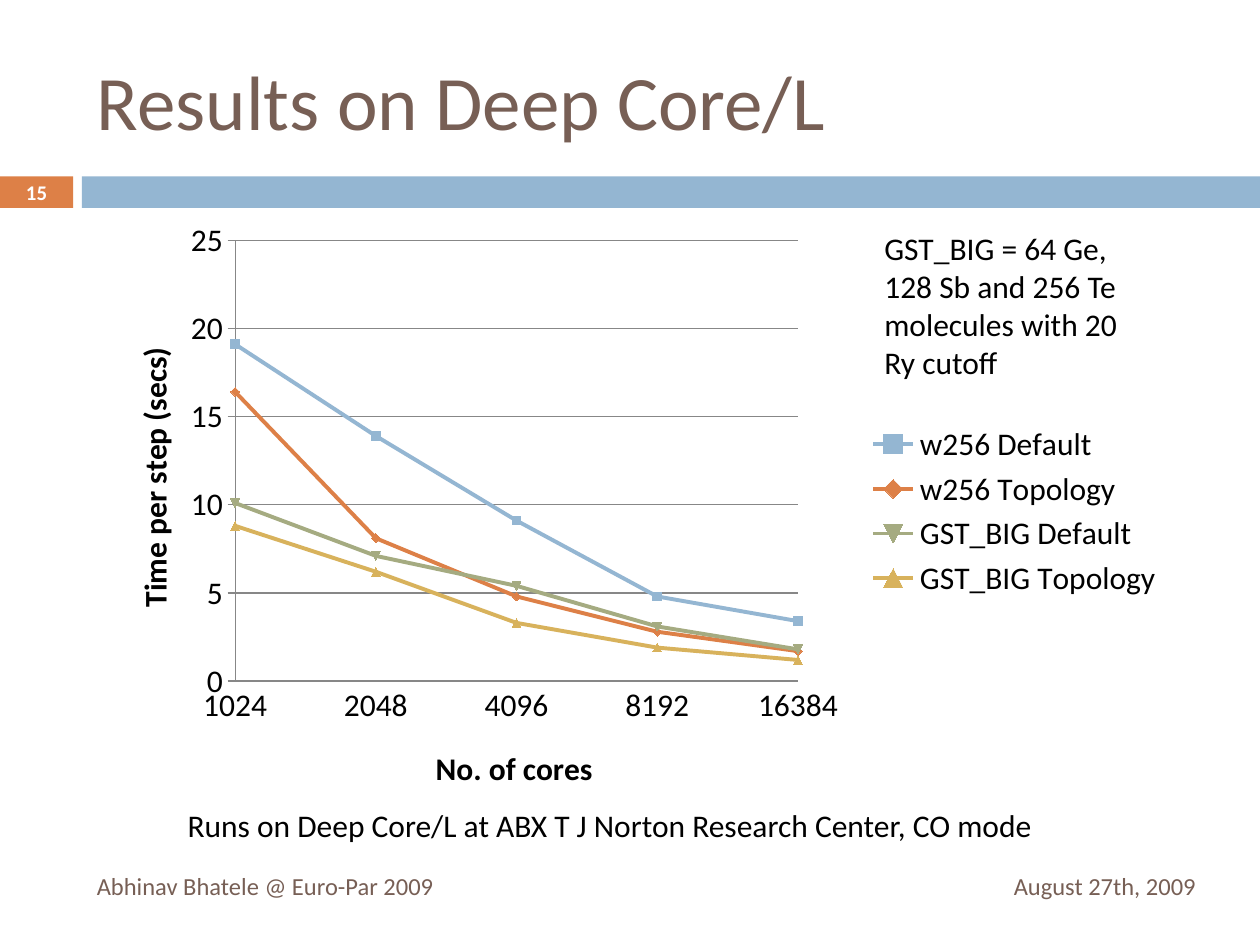
from lxml.etree import SubElement
from pptx import Presentation
from pptx.chart.data import CategoryChartData
from pptx.dml.color import RGBColor
from pptx.enum.chart import XL_CHART_TYPE, XL_LEGEND_POSITION, XL_TICK_MARK
from pptx.enum.shapes import MSO_SHAPE
from pptx.enum.text import MSO_ANCHOR, PP_ALIGN
from pptx.oxml.ns import qn
from pptx.util import Inches, Pt

HUES = {
    "blue": "94B6D2", "orange": "DD8047", "green": "A5AB81", "gold": "D8B25C",
    "brown": "775F55", "black": "000000", "white": "FFFFFF", "grey": "878787",
}
FONT = "Calibri"
CORES = ["1024", "2048", "4096", "8192", "16384"]
RUNS = [
    ("w256 Default", "blue", [19.1, 13.9, 9.1, 4.8, 3.4]),
    ("w256 Topology", "orange", [16.4, 8.1, 4.8, 2.8, 1.7]),
    ("GST_BIG Default", "green", [10.1, 7.1, 5.4, 3.1, 1.8]),
    ("GST_BIG Topology", "gold", [8.8, 6.2, 3.3, 1.9, 1.2]),
]


def hue(name):
    return RGBColor.from_string(HUES[name])


def style(font, size, color, bold=False):
    font.name = FONT
    font.size = Pt(size)
    font.bold = bold
    font.color.rgb = hue(color)


def add_text(slide, box, text, size, color, bold=False,
             align=PP_ALIGN.LEFT, anchor=MSO_ANCHOR.MIDDLE, wrap=True, inset=0.1):
    frame = slide.shapes.add_textbox(*map(Inches, box)).text_frame
    frame.word_wrap = wrap
    frame.vertical_anchor = anchor
    frame.margin_left = frame.margin_right = Inches(inset)
    line = frame.paragraphs[0]
    line.text = text
    line.alignment = align
    style(line.font, size, color, bold)


def add_bar(slide, box, color):
    bar = slide.shapes.add_shape(MSO_SHAPE.RECTANGLE, *map(Inches, box))
    bar.shadow.inherit = False
    bar.fill.solid()
    bar.fill.fore_color.rgb = hue(color)
    bar.line.fill.background()


def add_head(slide, box):
    left, top, width, height = box
    tab, gap, band = 0.58, 0.07, 0.25
    base = top + height - band
    add_text(slide, (left + 0.67, top, 8.92, 1.08),
             "Results on Deep Core/L", 44, "brown")
    add_bar(slide, (left, base, tab, band), "orange")
    add_bar(slide, (left + tab + gap, base, width - tab - gap, band), "blue")
    add_text(slide, (left, base - 0.01, tab, band + 0.02), "15", 11.9, "white",
             bold=True, align=PP_ALIGN.CENTER, inset=0)


def place(node, index, **parts):
    layout = node.find(qn("c:layout"))
    if layout is None:
        layout = SubElement(node, qn("c:layout"))
        node.insert(index, layout)
    manual = SubElement(layout, qn("c:manualLayout"))
    if index == 0:
        SubElement(manual, qn("c:layoutTarget")).set("val", "inner")
    for side in "xy":
        SubElement(manual, qn(f"c:{side}Mode")).set("val", "edge")
    for key, value in parts.items():
        SubElement(manual, qn(f"c:{key}")).set("val", str(value))


def set_axis(axis, text, tick, **spot):
    axis.has_title = True
    title = axis.axis_title
    title.text_frame.text = text
    style(title.text_frame.paragraphs[0].font, 18, "black", True)
    place(title._element, 1, **spot)
    axis.major_tick_mark = tick
    axis.minor_tick_mark = XL_TICK_MARK.NONE
    axis.format.line.color.rgb = hue("grey")
    axis.format.line.width = Pt(0.75)


def add_plot(slide, box):
    data = CategoryChartData()
    data.categories = CORES
    for name, _, times in RUNS:
        data.add_series(name, times)
    chart = slide.shapes.add_chart(
        XL_CHART_TYPE.LINE_MARKERS, *map(Inches, box), data).chart
    style(chart.font, 18, "black")
    chart.has_title = False

    set_axis(chart.category_axis, "No. of cores", XL_TICK_MARK.NONE, x=0.31, y=0.89)
    axis = chart.value_axis
    set_axis(axis, "Time per step (secs)", XL_TICK_MARK.CROSS, x=0.03, y=0.22)
    axis.minimum_scale, axis.maximum_scale, axis.major_unit = 0, 25, 5
    axis.tick_labels.number_format = "General"
    axis.tick_labels.number_format_is_linked = False
    axis.has_major_gridlines = True
    axis.major_gridlines.format.line.color.rgb = hue("grey")
    axis.major_gridlines.format.line.width = Pt(0.75)
    node = axis._element
    cross = node.find(qn("c:crossBetween"))
    if cross is None:
        cross = SubElement(node, qn("c:crossBetween"))
        node.find(qn("c:crosses")).addnext(cross)
    cross.set("val", "midCat")

    chart.has_legend = True
    chart.legend.position = XL_LEGEND_POSITION.RIGHT
    chart.legend.include_in_layout = False
    place(chart.legend._element, 1, x=0.71, y=0.35, w=0.28, h=0.31)
    place(chart._chartSpace.chart.plotArea, 0, x=0.13, y=0.05, w=0.52, h=0.74)

    plot = chart.plots[0]
    plot.vary_by_categories = False
    for series, (_, color, _) in zip(plot.series, RUNS):
        series.smooth = False
        series.format.line.color.rgb = hue(color)
        series.format.line.width = Pt(2.25)
        series.marker.size = 5
        series.marker.format.fill.solid()
        series.marker.format.fill.fore_color.rgb = hue(color)
        series.marker.format.line.color.rgb = hue(color)


def add_body(slide, box):
    left, top, width, height = box
    add_plot(slide, box)
    add_text(slide, (left + 6.17, top + 0.1, 2.25, 1.31),
             "GST_BIG = 64 Ge, 128 Sb and 256 Te molecules with 20 Ry cutoff",
             18, "black", anchor=MSO_ANCHOR.TOP)
    add_text(slide, (left + 0.64, top + height - 0.05, 7.11, 0.4),
             "Runs on Deep Core/L at ABX T J Norton Research Center, CO mode",
             18, "black", anchor=MSO_ANCHOR.TOP, wrap=False)


def add_foot(slide, box):
    left, top, width, height = box
    date = 2.92
    add_text(slide, (left, top, 5.93, height),
             "Abhinav Bhatele @ Euro-Par 2009", 14, "brown")
    add_text(slide, (left + width - date, top, date, height),
             "August 27th, 2009", 14, "brown", align=PP_ALIGN.RIGHT)


def main():
    deck = Presentation()
    deck.slide_width, deck.slide_height = Inches(10), Inches(7.5)
    slide = deck.slides.add_slide(deck.slide_layouts[6])
    add_head(slide, (0, 0.25, 10, 1.4))
    add_body(slide, (0.75, 1.67, 8.59, 4.73))
    add_foot(slide, (0.67, 6.83, 8.92, 0.4))
    deck.save("out.pptx")


if __name__ == "__main__":
    main()
